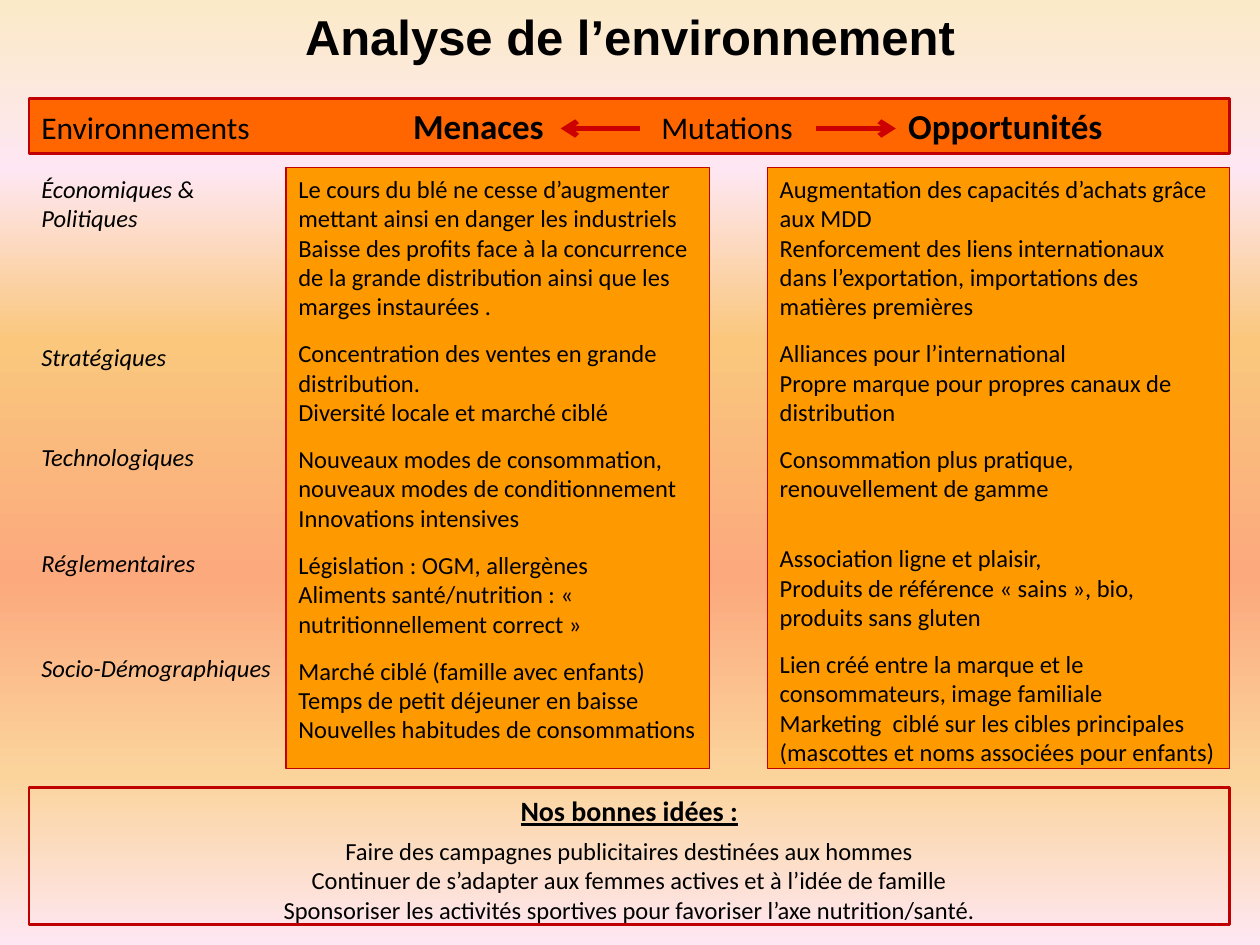
import pptx
import pptx.dml.color
import pptx.enum.shapes
import pptx.enum.text
import pptx.oxml.ns
import pptx.util
from lxml import etree

Inches = pptx.util.Inches
Pt = pptx.util.Pt
qn = pptx.oxml.ns.qn
ALIGN = pptx.enum.text.PP_ALIGN
ANCHOR = pptx.enum.text.MSO_ANCHOR

COLORS = {"text": "000000", "border": "C00000", "arrow": "CC0000",
          "header": "FF6600", "column": "FF9900"}
BACKGROUND = [(0, "FBEAC7"), (18, "FEE7F2"), (36, "FAC77D"),
              (61, "FBA97D"), (82, "FBD49C"), (100, "FEE7F2")]

MARGIN, FULL_WIDTH = 0.23, 9.53
COLUMN_TOP, COLUMN_HEIGHT = 1.33, 4.77
ARROW_Y, ARROW_LENGTH = 1.02, 0.63

# Each column is a list of (space before in points, paragraphs of the topic).
ENVIRONMENTS = [
    (0, ["Économiques &", "Politiques"]),
    (62.5, ["Stratégiques"]),
    (40.5, ["Technologiques"]),
    (43.5, ["Réglementaires"]),
    (43.5, ["Socio-Démographiques"]),
]
THREATS = [
    (0, ["Le cours du blé ne cesse d’augmenter mettant ainsi en danger les industriels",
         "Baisse des profits face à la concurrence de la grande distribution "
         "ainsi que les marges instaurées ."]),
    (10, ["Concentration des ventes en grande distribution.",
          "Diversité locale et marché ciblé"]),
    (10, ["Nouveaux modes de consommation, nouveaux modes de conditionnement",
          "Innovations intensives"]),
    (10, ["Législation : OGM, allergènes",
          "Aliments santé/nutrition : « nutritionnellement correct »"]),
    (10, ["Marché ciblé (famille avec enfants)",
          "Temps de petit déjeuner en baisse",
          "Nouvelles habitudes de consommations"]),
]
OPPORTUNITIES = [
    (0, ["Augmentation des capacités d’achats grâce aux MDD",
         "Renforcement des liens internationaux dans l’exportation, "
         "importations des matières premières"]),
    (10, ["Alliances pour l’international",
          "Propre marque pour propres canaux de distribution"]),
    (10, ["Consommation plus pratique, renouvellement de gamme"]),
    (23, ["Association ligne et plaisir,",
          "Produits de référence « sains », bio, produits sans gluten"]),
    (10, ["Lien créé entre la marque et le consommateurs, image familiale",
          "Marketing  ciblé sur les cibles principales "
          "(mascottes et noms associées pour enfants)"]),
]
IDEAS = [
    "Faire des campagnes publicitaires destinées aux hommes",
    "Continuer de s’adapter aux femmes actives et à l’idée de famille",
    "Sponsoriser les activités sportives pour favoriser l’axe nutrition/santé.",
]


def rgb(name):
    return pptx.dml.color.RGBColor.from_string(COLORS[name])


class SlideBuilder:
    def __init__(self, slide, font="Calibri", size=14):
        self.slide, self.font, self.size = slide, font, size

    def gradient_background(self, stops):
        fill = self.slide.background.fill
        fill.gradient()
        fill.gradient_angle = 270
        stop_list = self.slide.element.find(".//" + qn("a:gsLst"))
        for old_stop in list(stop_list):
            stop_list.remove(old_stop)
        for percent, color in stops:
            stop = etree.SubElement(stop_list, qn("a:gs"), pos=str(percent * 1000))
            etree.SubElement(stop, qn("a:srgbClr"), val=color)

    def text_box(self, left, top, width, height):
        box = self.slide.shapes.add_textbox(*map(Inches, (left, top, width, height)))
        box.text_frame.word_wrap = True
        return box.text_frame

    def rectangle(self, left, top, width, height, fill=None, line_width=0.75,
                  anchor=ANCHOR.TOP):
        box = self.slide.shapes.add_shape(
            pptx.enum.shapes.MSO_SHAPE.RECTANGLE,
            *map(Inches, (left, top, width, height)))
        box.shadow.inherit = False
        if fill:
            box.fill.solid()
            box.fill.fore_color.rgb = rgb(fill)
        else:
            box.fill.background()
        box.line.color.rgb = rgb("border")
        box.line.width = Pt(line_width)
        box.text_frame.word_wrap = True
        box.text_frame.vertical_anchor = anchor
        return box.text_frame

    def paragraph(self, frame, align=ALIGN.LEFT, before=0):
        """Return the frame's unused first paragraph, or a new one."""
        first = frame.paragraphs[0]
        para = frame.add_paragraph() if first.runs else first
        para.alignment = align
        para.space_before = Pt(before)
        return para

    def span(self, para, text, size=None, font=None, bold=False, italic=False,
             underline=False):
        span = para.add_run()
        span.text = text
        span.font.name = font or self.font
        span.font.size = Pt(size or self.size)
        span.font.bold, span.font.italic = bold, italic
        span.font.underline = underline
        span.font.color.rgb = rgb("text")

    def tab_stops(self, para, positions):
        tabs = etree.SubElement(para._p.get_or_add_pPr(), qn("a:tabLst"))
        for position in positions:
            etree.SubElement(tabs, qn("a:tab"), pos=str(Inches(position)), algn="l")

    def topics(self, frame, topics, italic=False):
        for gap, lines in topics:
            for index, line in enumerate(lines):
                para = self.paragraph(frame, before=0 if index else gap)
                self.span(para, line, italic=italic)

    def arrow(self, start, end, y):
        line = self.slide.shapes.add_connector(
            pptx.enum.shapes.MSO_CONNECTOR.STRAIGHT,
            *map(Inches, (start, y, end, y)))
        line.line.color.rgb = rgb("arrow")
        line.line.width = Pt(3)
        etree.SubElement(line.line._get_or_add_ln(), qn("a:tailEnd"), type="arrow")
        etree.SubElement(line._element.spPr, qn("a:effectLst"))


def main():
    deck = pptx.Presentation()
    deck.slide_width, deck.slide_height = Inches(10), Inches(7.5)
    page = SlideBuilder(deck.slides.add_slide(deck.slide_layouts[6]))
    page.gradient_background(BACKGROUND)

    title = page.paragraph(page.text_box(0, 0, 10, 0.57), ALIGN.CENTER)
    page.span(title, "Analyse de l’environnement", 28, "Arial", bold=True)

    header = page.paragraph(page.rectangle(
        MARGIN, 0.78, FULL_WIDTH, 0.44, "header", 1.5, ANCHOR.MIDDLE))
    page.tab_stops(header, (2.95, 4.92, 6.88))
    for text, size, bold in (("Environnements\t", 18, False), ("Menaces", 20, True),
                             ("\tMutations\t", 18, False), ("Opportunités", 20, True)):
        page.span(header, text, size, bold=bold)

    for left, width, topics in ((6.09, 3.67, OPPORTUNITIES), (2.27, 3.36, THREATS)):
        column = page.rectangle(left, COLUMN_TOP, width, COLUMN_HEIGHT, "column")
        page.topics(column, topics)
    labels = page.text_box(MARGIN, COLUMN_TOP, 2.11, 4.31)
    page.topics(labels, ENVIRONMENTS, italic=True)

    ideas = page.rectangle(MARGIN, 6.25, FULL_WIDTH, 1.09, line_width=1.5)
    heading = page.paragraph(ideas, ALIGN.CENTER)
    page.span(heading, "Nos bonnes idées :", 16, bold=True, underline=True)
    for index, idea in enumerate(IDEAS):
        para = page.paragraph(ideas, ALIGN.CENTER, before=0 if index else 5)
        page.span(para, idea)

    page.arrow(6.48, 6.48 + ARROW_LENGTH, ARROW_Y)
    page.arrow(5.08, 5.08 - ARROW_LENGTH, ARROW_Y)
    deck.save("out.pptx")


if __name__ == "__main__":
    main()
